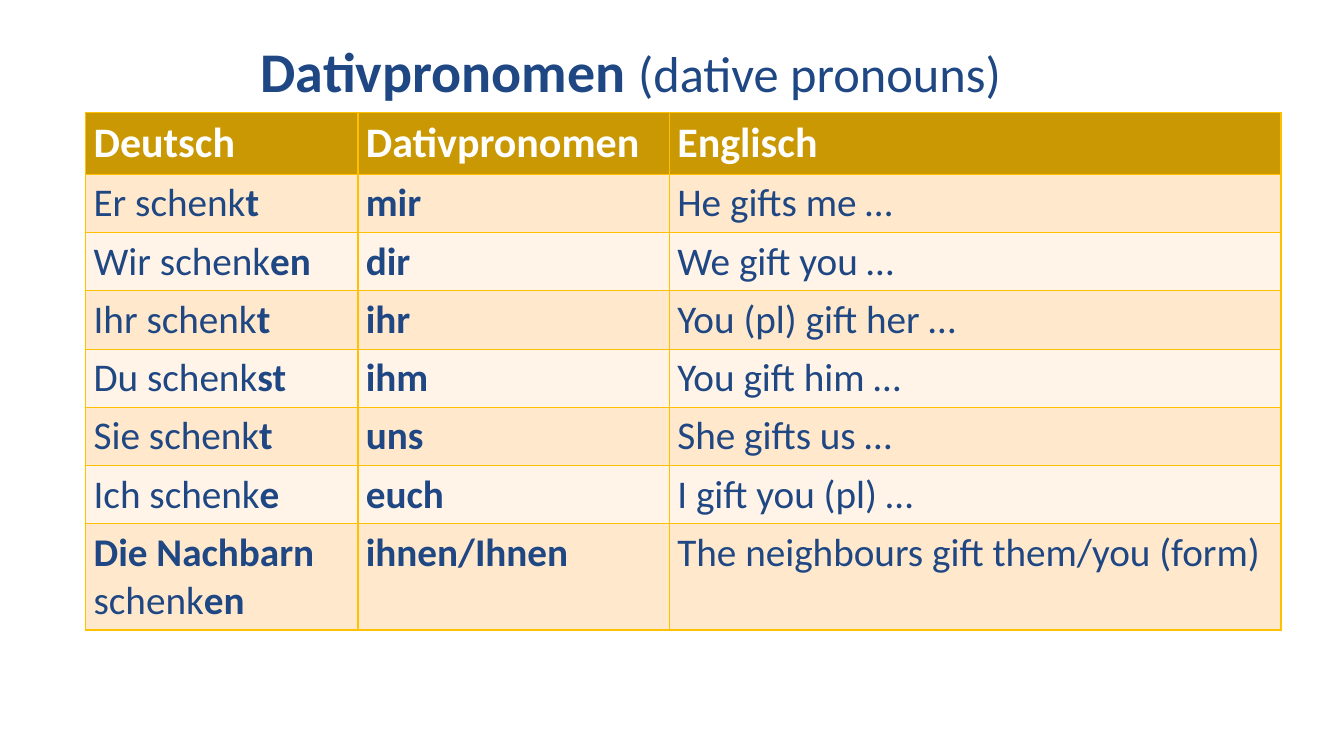
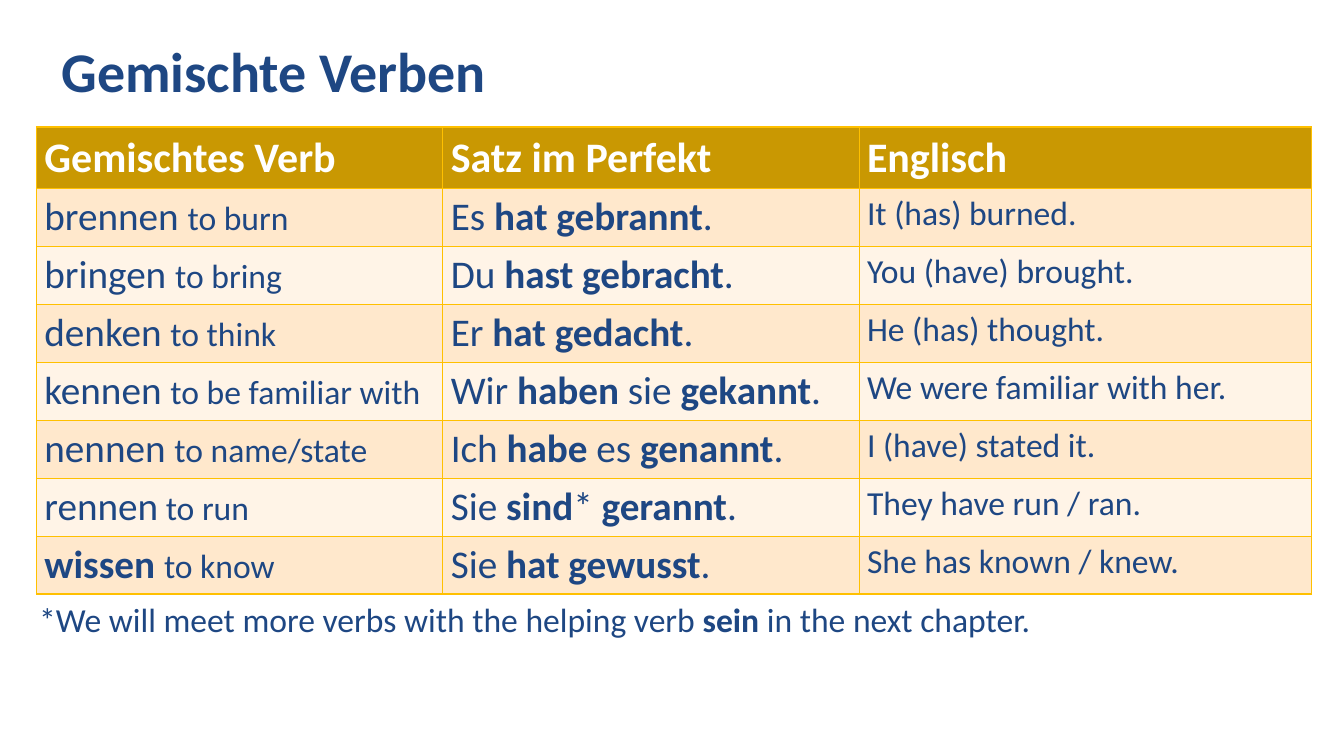
from dataclasses import dataclass

import pptx
import pptx.dml.color
import pptx.enum.text
import pptx.oxml
import pptx.oxml.ns
import pptx.presentation
import pptx.slide
import pptx.table
import pptx.text.text
import pptx.util

Cm = pptx.util.Cm
RGBColor = pptx.dml.color.RGBColor
Align = pptx.enum.text.PP_ALIGN
Anchor = pptx.enum.text.MSO_ANCHOR

# Shared look
FONT = "Calibri"
BLUE = RGBColor(0x1E, 0x47, 0x83)
WHITE = RGBColor(0xFF, 0xFF, 0xFF)
OCHRE = RGBColor(0xC9, 0x98, 0x02)
GOLD = RGBColor(0xFF, 0xC0, 0x00)
BANDS = (RGBColor(0xFF, 0xE8, 0xCC), RGBColor(0xFF, 0xF4, 0xE7))
HEADER_HEIGHT, ROW_HEIGHT = 1.55, 1.46
BORDER_WIDTH = pptx.util.Pt(0.96)


@dataclass(frozen=True)
class Box:
    """A place on the slide, in centimetres."""

    left: float
    top: float
    width: float
    height: float


@dataclass(frozen=True)
class GrammarTable:
    """Cell text marks bold parts with | and starts a smaller part with ^."""

    left: float
    top: float
    widths: tuple[float, ...]
    header: tuple[str, ...]
    rows: tuple[tuple[str, ...], ...]


TITLE_BOX = Box(1.3, 1.02, 29.2, 1.72)
NOTE_BOX = Box(0.74, 14.96, 30.25, 1.27)

PRONOUNS = GrammarTable(
    2.16, 2.84, (6.86, 7.85, 15.41),
    ("Deutsch", "Dativpronomen", "Englisch"),
    (
        ("Er schenk|t|", "|mir|", "He gifts me …"),
        ("Wir schenk|en|", "|dir|", "We gift you …"),
        ("Ihr schenk|t|", "|ihr|", "You (pl) gift her …"),
        ("Du schenk|st|", "|ihm|", "You gift him …"),
        ("Sie schenk|t|", "|uns|", "She gifts us …"),
        ("Ich schenk|e|", "|euch|", "I gift you (pl) …"),
        ("|Die Nachbarn |schenk|en|", "|ihnen/Ihnen|",
         "The neighbours gift them/you (form)"),
    ),
)

MIXED_VERBS = GrammarTable(
    0.92, 3.2, (10.24, 10.49, 11.4),
    ("Gemischtes Verb", "Satz im Perfekt", "Englisch"),
    (
        ("brennen ^to burn", "Es |hat gebrannt|.", "^It (has) burned."),
        ("bringen ^to bring", "Du |hast gebracht|.", "^You (have) brought."),
        ("denken ^to think", "Er |hat gedacht|.", "^He (has) thought."),
        ("kennen ^to be familiar with", "Wir |haben |sie |gekannt|.",
         "^We were familiar with her."),
        ("nennen ^to name/state", "Ich |habe| es |genannt|.", "^I (have) stated it."),
        ("rennen^ to run", "Sie |sind|* |gerannt|.", "^They have run / ran."),
        ("|wissen |^to know", "Sie |hat gewusst|.", "^She has known / knew."),
    ),
)


def write_text(
    frame: pptx.text.text.TextFrame,
    text: str,
    *,
    size: float,
    small_size: float = 24,
    color: RGBColor = BLUE,
    align: Align = Align.LEFT,
    line_spacing: float = 1.0,
) -> None:
    """Write one paragraph, reading the bold and small marks."""
    paragraph = frame.paragraphs[0]
    paragraph.alignment = align
    paragraph.line_spacing = line_spacing
    main, _, small = text.partition("^")
    for part, points in ((main, size), (small, small_size)):
        for index, words in enumerate(part.split("|")):
            if not words:
                continue
            run = paragraph.add_run()
            run.text = words
            run.font.name = FONT
            run.font.size = pptx.util.Pt(points)
            run.font.bold = index % 2 == 1
            run.font.color.rgb = color


def add_text_box(slide: pptx.slide.Slide, box: Box) -> pptx.text.text.TextFrame:
    shape = slide.shapes.add_textbox(
        Cm(box.left), Cm(box.top), Cm(box.width), Cm(box.height))
    shape.text_frame.word_wrap = True
    return shape.text_frame


def add_title(slide: pptx.slide.Slide, text: str, align: Align = Align.LEFT) -> None:
    frame = add_text_box(slide, TITLE_BOX)
    frame.vertical_anchor = Anchor.MIDDLE
    write_text(frame, text, size=40, small_size=36, align=align, line_spacing=0.9)


def add_borders(cell: pptx.table._Cell) -> None:
    properties = cell._tc.get_or_add_tcPr()
    namespace = pptx.oxml.ns.nsdecls("a")
    for side in ("lnL", "lnR", "lnT", "lnB"):
        properties.append(pptx.oxml.parse_xml(
            f'<a:{side} {namespace} w="{int(BORDER_WIDTH)}"><a:solidFill>'
            f'<a:srgbClr val="{GOLD}"/></a:solidFill></a:{side}>'))


def add_cell(
    cell: pptx.table._Cell, text: str, *, fill: RGBColor, size: float, color: RGBColor
) -> None:
    cell.margin_left = cell.margin_right = Cm(0.2)
    cell.margin_top = cell.margin_bottom = Cm(0.13)
    add_borders(cell)
    cell.fill.solid()
    cell.fill.fore_color.rgb = fill
    write_text(cell.text_frame, text, size=size, color=color)


def add_grammar_table(slide: pptx.slide.Slide, content: GrammarTable) -> None:
    height = HEADER_HEIGHT + ROW_HEIGHT * len(content.rows)
    table = slide.shapes.add_table(
        len(content.rows) + 1, len(content.widths), Cm(content.left), Cm(content.top),
        Cm(sum(content.widths)), Cm(height)).table
    table.horz_banding = False
    for column, width in zip(table.columns, content.widths):
        column.width = Cm(width)

    # Header row
    table.rows[0].height = Cm(HEADER_HEIGHT)
    for column_index, text in enumerate(content.header):
        add_cell(table.cell(0, column_index), f"|{text}|",
                 fill=OCHRE, size=30, color=WHITE)

    # Banded rows
    for row_index, texts in enumerate(content.rows, start=1):
        table.rows[row_index].height = Cm(ROW_HEIGHT)
        band = BANDS[(row_index - 1) % len(BANDS)]
        for column_index, text in enumerate(texts):
            add_cell(table.cell(row_index, column_index), text,
                     fill=band, size=28, color=BLUE)


def add_blank_slide(presentation: pptx.presentation.Presentation) -> pptx.slide.Slide:
    return presentation.slides.add_slide(presentation.slide_layouts[6])


def main() -> None:
    presentation = pptx.Presentation()
    presentation.slide_width = Cm(33.87)
    presentation.slide_height = Cm(19.05)

    # Dative pronouns
    slide = add_blank_slide(presentation)
    add_grammar_table(slide, PRONOUNS)
    add_title(slide, "|Dativpronomen |^(dative pronouns)", Align.CENTER)

    # Mixed verbs
    slide = add_blank_slide(presentation)
    add_grammar_table(slide, MIXED_VERBS)
    add_title(slide, "|Gemischte Verben|")
    write_text(
        add_text_box(slide, NOTE_BOX),
        "*We will meet more verbs with the helping verb |sein| in the next chapter.",
        size=24)

    presentation.save("out.pptx")


if __name__ == "__main__":
    main()
